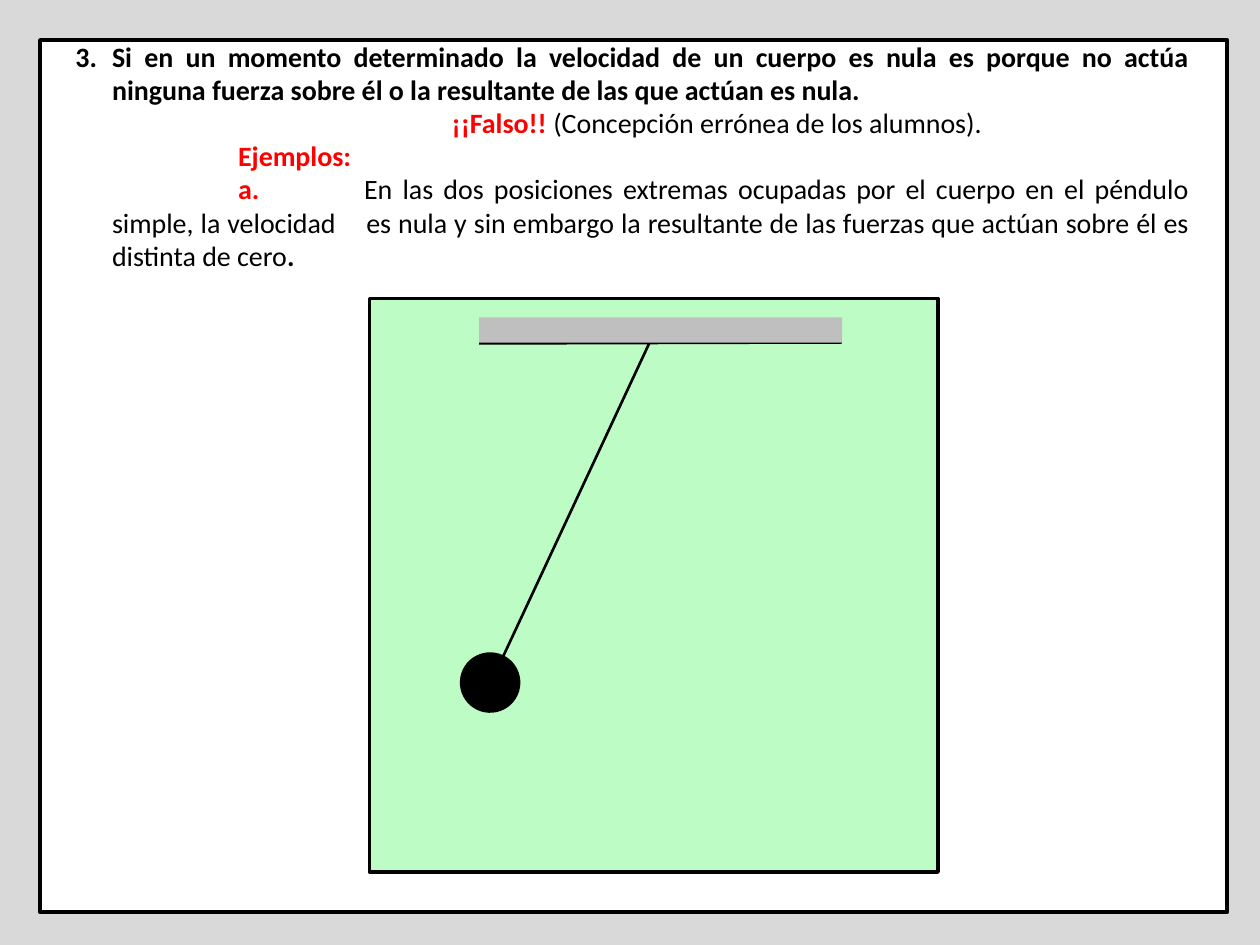
from lxml import etree
from pptx import Presentation
from pptx import util as u
from pptx.dml.color import RGBColor
from pptx.enum import shapes, text
from pptx.oxml.ns import qn

COLORS = {
    "background": "D9D9D9",
    "page": "FFFFFF",
    "ink": "000000",
    "accent": "FF0000",
    "panel": "2AF642",
    "ceiling": "BFBFBF",
}
FONT, TEXT_SIZE, LINE_PITCH = "Calibri", 16, 19
HANGING, TAB_STEP = 0.74, 2.54
FIRST_NUMBER = 3

# Each paragraph: alignment, numbered, runs of (words, colour, bold)
PARAGRAPHS = [
    ("JUSTIFY", True, [
        ("Si en un momento determinado la velocidad de un cuerpo es nula es porque no actúa "
         "ninguna fuerza sobre él o la resultante de las que actúan es nula. ", "ink", True),
    ]),
    ("CENTER", False, [
        ("\t\t", "ink", True),
        (" ¡¡Falso!! ", "accent", True),
        ("(Concepción errónea de los alumnos).", "ink", False),
    ]),
    ("JUSTIFY", False, [("\t\tEjemplos:", "accent", True)]),
    ("JUSTIFY", False, [
        ("\t\t", "ink", True),
        ("a.\t", "accent", True),
        ("En las dos posiciones extremas ocupadas por el cuerpo en el péndulo simple, "
         "la velocidad \tes nula y sin embargo la resultante de las fuerzas que actúan "
         "sobre él es distinta de cero", "ink", False),
        (".", "ink", True),
    ]),
]

# Left, top, width, height in cm
PAGE = (0.81, 0.81, 23.93, 17.58)
STATEMENT = (1.27, 0.98, 22.96, 4.32)
PANEL = (7.45, 6.02, 11.46, 11.56)
BOB = (9.27, 13.15, 1.22, 1.22)
CEILING = (9.66, 6.4, 7.32, 0.51)
# Start x, start y, end x, end y in cm
STRING = (10.13, 13.26, 13.13, 6.83)
CEILING_EDGE = (9.66, 6.91, 16.97, 6.89)


def rgb(name):
    return RGBColor.from_string(COLORS[name])


def cm(values):
    return [u.Cm(value) for value in values]


def add_solid(parent, kind, box, fill, line_width=None):
    """Filled shape; outlined in ink only when a line width is given."""
    solid = parent.add_shape(kind, *cm(box))
    solid.shadow.inherit = False
    solid.fill.solid()
    solid.fill.fore_color.rgb = rgb(fill)
    if line_width:
        solid.line.color.rgb = rgb("ink")
        solid.line.width = u.Pt(line_width)
    else:
        solid.line.fill.background()
    return solid


def add_line(parent, ends, width):
    line = parent.add_connector(shapes.MSO_CONNECTOR.STRAIGHT, *cm(ends))
    line.line.color.rgb = rgb("ink")
    line.line.width = u.Pt(width)
    etree.SubElement(line._element.spPr, qn("a:effectLst"))


def set_opacity(solid, percent):
    color = solid._element.spPr.find(qn("a:solidFill"))[0]
    etree.SubElement(color, qn("a:alpha"), val=str(percent * 1000))


def set_default_tabs(deck):
    for root in (deck.element, deck.slide_master.element):
        for level in root.iter():
            if level.get("defTabSz"):
                level.set("defTabSz", str(u.Cm(TAB_STEP)))


def add_statement(parent):
    box = parent.add_textbox(*cm(STATEMENT))
    frame = box.text_frame
    frame.word_wrap = True
    frame.auto_size = text.MSO_AUTO_SIZE.SHAPE_TO_FIT_TEXT
    frame.vertical_anchor = text.MSO_ANCHOR.MIDDLE
    for index, (alignment, numbered, runs) in enumerate(PARAGRAPHS):
        paragraph = frame.add_paragraph() if index else frame.paragraphs[0]
        paragraph.alignment = text.PP_ALIGN[alignment]
        paragraph.line_spacing = u.Pt(LINE_PITCH)
        properties = paragraph._p.get_or_add_pPr()
        properties.set("marL", str(u.Cm(HANGING)))
        properties.set("indent", str(-u.Cm(HANGING)))
        properties.set("defTabSz", str(u.Cm(TAB_STEP)))
        if numbered:
            etree.SubElement(properties, qn("a:buFontTx"))
            etree.SubElement(properties, qn("a:buAutoNum"),
                             type="arabicPeriod", startAt=str(FIRST_NUMBER))
        else:
            etree.SubElement(properties, qn("a:buNone"))
        for words, color, bold in runs:
            run = paragraph.add_run()
            run.text = words
            run.font.name = FONT
            run.font.size = u.Pt(TEXT_SIZE)
            run.font.bold = bold
            run.font.color.rgb = rgb(color)


def main():
    deck = Presentation()
    deck.slide_width, deck.slide_height = cm((25.4, 19.05))
    set_default_tabs(deck)
    slide = deck.slides.add_slide(deck.slide_layouts[6])
    slide.background.fill.solid()
    slide.background.fill.fore_color.rgb = rgb("background")

    rectangle = shapes.MSO_SHAPE.RECTANGLE
    add_solid(slide.shapes, rectangle, PAGE, "page", 2.25)
    add_statement(slide.shapes)
    set_opacity(add_solid(slide.shapes, rectangle, PANEL, "panel", 2), 30)

    pendulum = slide.shapes.add_group_shape().shapes
    add_line(pendulum, STRING, 1.5)
    add_solid(pendulum, shapes.MSO_SHAPE.OVAL, BOB, "ink").rotation = 25

    support = slide.shapes.add_group_shape().shapes
    add_line(support, CEILING_EDGE, 2.25)
    add_solid(support, rectangle, CEILING, "ceiling")

    deck.save("out.pptx")


if __name__ == "__main__":
    main()
